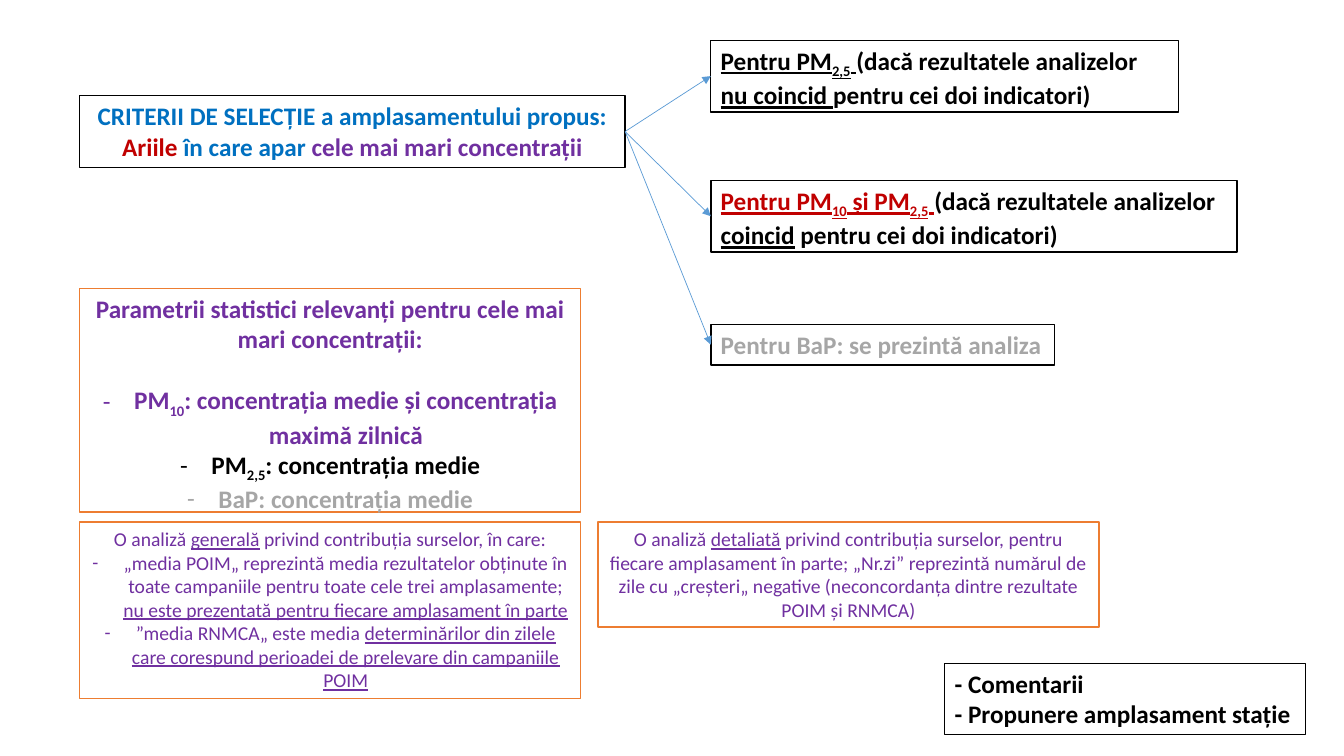
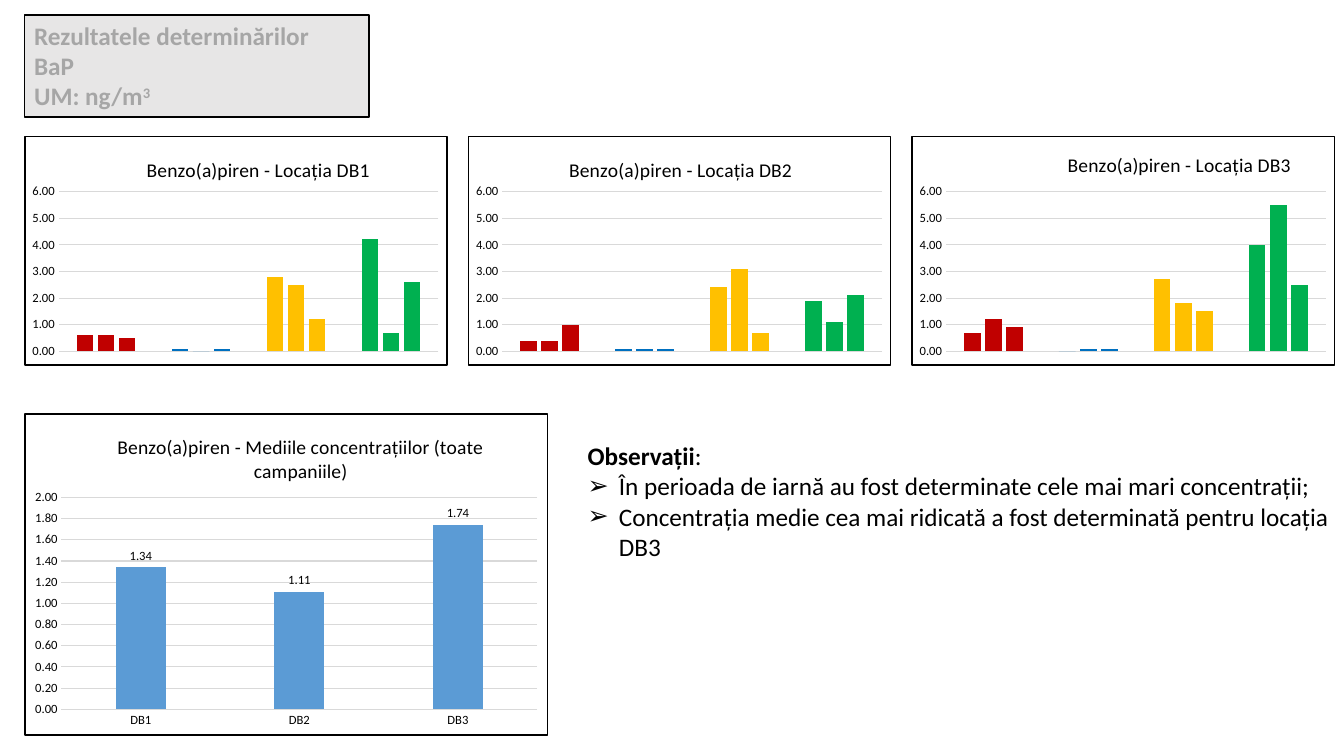
"""Build two slides on site selection criteria and benzo(a)pyrene results."""
from lxml import etree
from pptx import Presentation
from pptx.chart.data import CategoryChartData as ChartData
from pptx.dml.color import RGBColor
from pptx.enum.chart import XL_CHART_TYPE as Kind, XL_LABEL_POSITION as Spot, XL_TICK_MARK as Tick
from pptx.enum.shapes import MSO_CONNECTOR as Link
from pptx.enum.text import PP_ALIGN as Align
from pptx.oxml import parse_xml
from pptx.oxml.ns import nsdecls, qn
from pptx.util import Inches, Pt

BLACK = RGBColor(0x00, 0x00, 0x00)
WHITE = RGBColor(0xFF, 0xFF, 0xFF)
PALE = RGBColor(0xE7, 0xE6, 0xE6)
GRID = RGBColor(0xD9, 0xD9, 0xD9)
GRAY = RGBColor(0xA6, 0xA6, 0xA6)
RED = RGBColor(0xC0, 0x00, 0x00)
BLUE = RGBColor(0x00, 0x70, 0xC0)
SKY = RGBColor(0x5B, 0x9B, 0xD5)
GOLD = RGBColor(0xFF, 0xC0, 0x00)
GREEN = RGBColor(0x00, 0xB0, 0x50)
PURPLE = RGBColor(0x70, 0x30, 0xA0)
ORANGE = RGBColor(0xED, 0x7D, 0x31)
FACE = "Calibri"
BASE = {"sub": "-25000", "sup": "30000"}


def add_box(slide, at, paras, edge=BLACK, fill=WHITE, size=18, bold=True, mid=False):
    """Add a text box; each paragraph is (bullet, colour, runs), each run a text or (text, style)."""
    box = slide.shapes.add_textbox(*map(Inches, at))
    if edge is not None:
        box.fill.solid()
        box.fill.fore_color.rgb = fill
        box.line.color.rgb = edge
        box.line.width = Pt(1)
    frame = box.text_frame
    frame.word_wrap = True
    for i, (mark, ink, runs) in enumerate(paras):
        para = frame.add_paragraph() if i else frame.paragraphs[0]
        para.alignment = Align.CENTER if mid else Align.LEFT
        if mark:
            props = para._p.get_or_add_pPr()
            props.set("marL", str(Inches(0.31)))
            props.set("indent", str(-Inches(0.31)))
            etree.SubElement(props, qn("a:buFont")).set("typeface", FACE)
            etree.SubElement(props, qn("a:buChar")).set("char", mark)
        font = para.font
        font.name, font.size, font.bold = FACE, Pt(size), bold
        font.color.rgb = ink
        for item in runs:
            text, *styles = (item,) if isinstance(item, str) else item
            run = para.add_run()
            run.text = text
            for style in styles:
                if style in BASE:
                    run._r.get_or_add_rPr().set("baseline", BASE[style])
                elif style == "u":
                    run.font.underline = True
                elif style == "b":
                    run.font.bold = True
                else:
                    run.font.color.rgb = style
    return box


def add_bars(slide, at, title, spot, plot, cats, rows):
    """Add a bordered column chart with set title and plot places."""
    data = ChartData(number_format="0.00")
    data.categories = cats
    for n, row in enumerate(rows, 1):
        data.add_series(f"Series {n}", row)
    chart = slide.shapes.add_chart(Kind.COLUMN_CLUSTERED, *map(Inches, at), data).chart
    chart.has_legend = False
    chart.font.name, chart.font.size = FACE, Pt(10)
    chart.font.color.rgb = BLACK
    chart.has_title = True
    head = chart.chart_title
    head.text_frame.text = title
    font = head.text_frame.paragraphs[0].font
    font.name, font.size, font.bold = FACE, Pt(14), False
    font.color.rgb = BLACK
    head.include_in_layout = False
    area = chart._chartSpace.chart.plotArea
    for node, sides, inner in ((head._element, spot, False), (area, plot, True)):
        for old in node.findall(qn("c:layout")):
            node.remove(old)
        parts = '<c:layoutTarget val="inner"/>' if inner else ""
        parts += '<c:xMode val="edge"/><c:yMode val="edge"/>'
        parts += "".join(f'<c:{k} val="{v}"/>' for k, v in zip("xywh", sides))
        layout = parse_xml(f'<c:layout {nsdecls("c")}><c:manualLayout>{parts}</c:manualLayout></c:layout>')
        node.insert(0 if inner else 1, layout)
    chart._chartSpace.chart.addnext(parse_xml(
        f'<c:spPr {nsdecls("c", "a")}><a:solidFill><a:srgbClr val="{WHITE}"/></a:solidFill>'
        f'<a:ln w="{Pt(1)}"><a:solidFill><a:srgbClr val="{BLACK}"/></a:solidFill></a:ln></c:spPr>'))
    bars = chart.plots[0]
    bars.gap_width, bars.overlap, bars.vary_by_categories = 219, -27, False
    for axis in (chart.category_axis, chart.value_axis):
        axis.major_tick_mark = axis.minor_tick_mark = Tick.NONE
        axis.tick_labels.font.size = Pt(9)
    chart.category_axis.format.line.color.rgb = GRID
    axis = chart.value_axis
    axis.minimum_scale = 0
    axis.format.line.fill.background()
    axis.major_gridlines.format.line.color.rgb = GRID
    axis.major_gridlines.format.line.width = Pt(0.75)
    axis.tick_labels.number_format = "0.00"
    axis.tick_labels.number_format_is_linked = False
    return chart


deck = Presentation()
deck.slide_width, deck.slide_height = Inches(13.33), Inches(7.5)
blank = deck.slide_layouts[6]

slide = deck.slides.add_slide(blank)
root = add_box(slide, (0.79, 0.95, 5.41, 0.71), [
    ("", BLUE, ["CRITERII DE SELECȚIE a amplasamentului propus:"]),
    ("", BLUE, [("Ariile", RED), " în care apar ", ("cele mai mari concentrații", PURPLE)]),
], mid=True)
stats = add_box(slide, (0.79, 2.86, 4.97, 2.22), [
    ("", PURPLE, ["Parametrii statistici relevanți pentru cele mai mari concentrații:"]),
    ("-", PURPLE, ["PM", ("10", "sub"), ": concentrația medie și concentrația maximă zilnică"]),
    ("-", BLACK, ["PM", ("2,5", "sub"), ": concentrația medie"]),
    ("-", GRAY, ["BaP: concentrația medie"]),
], ORANGE, mid=True)
stats.text_frame.paragraphs[0].space_after = Pt(22)

cases = [
    ((7.05, 0.4, 4.64, 0.71), BLACK, [
        ("Pentru PM", "u"), ("2,5", "u", "sub"), (" ", "u"), "(dacă rezultatele analizelor ",
        ("nu coincid ", "u"), "pentru cei doi indicatori)"]),
    ((7.05, 1.79, 5.22, 0.71), BLACK, [
        ("Pentru PM", "u", RED), ("10", "u", "sub", RED), (" și PM", "u", RED),
        ("2,5", "u", "sub", RED), (" ", "u", RED), "(dacă rezultatele analizelor ",
        ("coincid", "u"), " pentru cei doi indicatori)"]),
    ((7.05, 3.22, 3.41, 0.4), GRAY, ["Pentru BaP: se prezintă analiza"]),
]
for at, ink, runs in cases:
    case = add_box(slide, at, [("", ink, runs)])
    arrow = slide.shapes.add_connector(Link.STRAIGHT, 0, 0, 0, 0)
    arrow.begin_connect(root, 3)
    arrow.end_connect(case, 1)
    arrow.line.color.rgb = SKY
    arrow.line.width = Pt(0.5)
    etree.SubElement(arrow.line._get_or_add_ln(), qn("a:tailEnd")).set("type", "triangle")
    etree.SubElement(arrow._element.spPr, qn("a:effectLst"))

add_box(slide, (0.79, 5.18, 4.97, 1.75), [
    ("", PURPLE, ["O analiză ", ("generală", "u"), " privind contribuția surselor, în care:"]),
    ("-", PURPLE, [
        "„media POIM„ reprezintă media rezultatelor obținute în toate campaniile "
        "pentru toate cele trei amplasamente; ",
        ("nu este prezentată pentru fiecare amplasament în parte", "u")]),
    ("-", PURPLE, [
        "”media RNMCA„ este media ",
        ("determinărilor din zilele care corespund perioadei de prelevare din campaniile POIM", "u")]),
], ORANGE, size=14, bold=False, mid=True)
add_box(slide, (9.37, 6.58, 3.58, 0.71), [
    ("", BLACK, ["- Comentarii"]),
    ("", BLACK, ["- Propunere amplasament stație"]),
])
add_box(slide, (5.93, 5.18, 4.97, 1.04), [
    ("", PURPLE, [
        "O analiză ", ("detaliată", "u"),
        " privind contribuția surselor, pentru fiecare amplasament în parte; „Nr.zi” reprezintă "
        "numărul de zile cu „creșteri„ negative (neconcordanța dintre rezultate POIM și RNMCA)"]),
], ORANGE, size=14, bold=False, mid=True)

slide = deck.slides.add_slide(blank)
add_box(slide, (0.24, 0.15, 3.42, 1.01), [
    ("", GRAY, ["Rezultatele determinărilor"]),
    ("", GRAY, ["BaP"]),
    ("", GRAY, ["UM: ng/m", ("3", "sup")]),
], fill=PALE)
add_box(slide, (5.73, 4.32, 7.6, 1.31), [
    ("", BLACK, [("Observații", "b"), ":"]),
    ("➢", BLACK, ["În perioada de iarnă au fost determinate cele mai mari concentrații;"]),
    ("➢", BLACK, ["Concentrația medie cea mai ridicată a fost determinată pentru locația DB3"]),
], edge=None, bold=False)

sites = [
    ("DB1", (0.28, 0.07), [(0.6, 0.1, 2.8, 4.2), (0.6, 0, 2.5, 0.7), (0.5, 0.1, 1.2, 2.6)]),
    ("DB2", (0.23, 0.07), [(0.4, 0.1, 2.4, 1.9), (0.4, 0.1, 3.1, 1.1), (1, 0.1, 0.7, 2.1)]),
    ("DB3", (0.36, 0.05), [(0.7, 0, 2.7, 4), (1.2, 0.1, 1.8, 5.5), (0.9, 0.1, 1.5, 2.5)]),
]
for i, (site, spot, rows) in enumerate(sites):
    chart = add_bars(slide, (0.24 + 4.4 * i, 1.35, 4.2, 2.28), f"Benzo(a)piren - Locația {site}",
                     spot, (0.08, 0.24, 0.9, 0.7), "1234", rows)
    chart.category_axis.visible = False
    chart.value_axis.maximum_scale = 6
    chart.value_axis.major_unit = 1
    for series in chart.series:
        for j, tint in enumerate((RED, BLUE, GOLD, GREEN)):
            fill = series.points[j].format.fill
            fill.solid()
            fill.fore_color.rgb = tint

chart = add_bars(slide, (0.24, 4.1, 5.2, 3.2), "Benzo(a)piren - Mediile concentrațiilor (toate campaniile)",
                 (0.17, 0.05), (0.07, 0.26, 0.91, 0.66), [site[0] for site in sites], [(1.34, 1.11, 1.74)])
chart.value_axis.maximum_scale = 2
chart.value_axis.major_unit = 0.2
means = chart.series[0]
means.format.fill.solid()
means.format.fill.fore_color.rgb = SKY
labels = means.data_labels
labels.show_value = True
labels.number_format, labels.number_format_is_linked = "0.00", False
labels.position = Spot.OUTSIDE_END
labels.font.name, labels.font.size = FACE, Pt(9)
labels.font.color.rgb = BLACK

deck.save("out.pptx")
